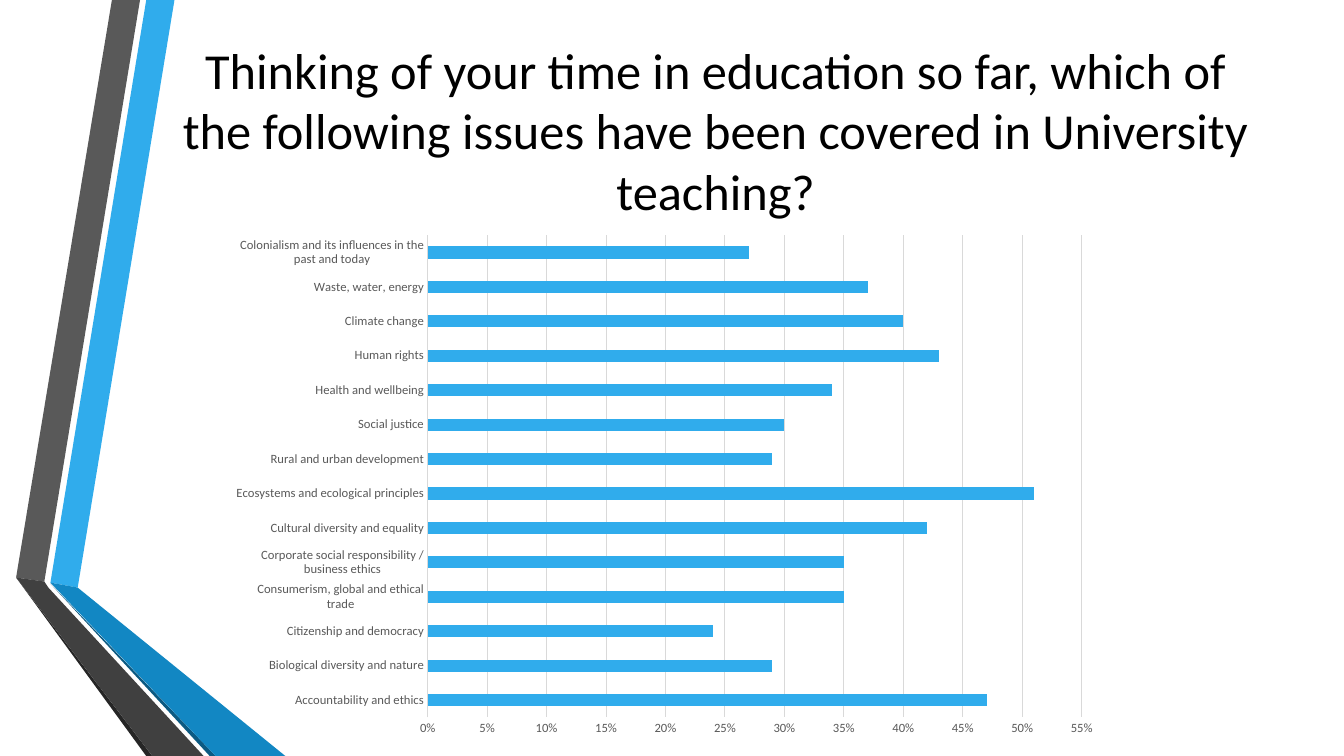
import pptx
import pptx.chart.data
import pptx.dml.color
import pptx.enum.chart
import pptx.enum.text
import pptx.oxml
import pptx.util

RGBColor = pptx.dml.color.RGBColor
BLACK = RGBColor(0x00, 0x00, 0x00)
LABEL_GREY = RGBColor(0x59, 0x59, 0x59)
RULE_GREY = RGBColor(0xD9, 0xD9, 0xD9)
BLUE = RGBColor(0x30, 0xAC, 0xEC)
MID_BLUE = RGBColor(0x12, 0x87, 0xC3)
DEEP_BLUE = RGBColor(0x0C, 0x5A, 0x82)
DARK_GREY = RGBColor(0x40, 0x40, 0x40)
DEEP_GREY = RGBColor(0x26, 0x26, 0x26)
FONT = "Calibri"

deck = pptx.Presentation()
deck.slide_width = pptx.util.Inches(13.33)
deck.slide_height = pptx.util.Inches(7.5)
page = deck.slides.add_slide(deck.slide_layouts[6])

# Grid of 100 columns by 100 rows
COLUMN = deck.slide_width / 100
ROW = deck.slide_height / 100


def place(column, row):
    return round(column * COLUMN), round(row * ROW)


def add_text(text, at, size, color, align, anchor, bottom_rows=0):
    box = page.shapes.add_textbox(*place(*at[:2]), *place(*at[2:]))
    frame = box.text_frame
    frame.word_wrap = True
    frame.vertical_anchor = anchor
    frame.margin_bottom = round(bottom_rows * ROW)
    para = frame.paragraphs[0]
    para.alignment = align
    span = para.add_run()
    span.text = text
    span.font.name = FONT
    span.font.size = pptx.util.Pt(size)
    span.font.color.rgb = color


# Folded ribbons along the left edge, back to front
ribbons = [
    (BLUE, [(3.75, 77.07), (5.78, 77.73), (12.98, 0), (10.88, 0)]),
    (LABEL_GREY, [(10.42, 0), (8.33, 0), (1.2, 76.4), (3.3, 76.93)]),
    (DEEP_GREY, [(1.2, 76.4), (10.88, 100), (11.33, 100)]),
    (DEEP_BLUE, [(3.75, 77.2), (15.6, 100), (16.05, 100)]),
    (MID_BLUE, [(3.75, 77.07), (16.05, 100), (21.23, 100), (5.78, 77.73)]),
    (DARK_GREY, [(15.15, 100), (3.6, 77.73), (3.3, 76.93), (1.2, 76.4), (11.33, 100)]),
]
for color, corners in ribbons:
    points = [place(*corner) for corner in corners]
    outline = page.shapes.build_freeform(*points[0])
    outline.add_line_segments(points[1:], close=True)
    ribbon = outline.convert_to_shape()
    ribbon.shadow.inherit = False
    ribbon.fill.solid()
    ribbon.fill.fore_color.rgb = color
    ribbon.line.fill.background()

# Question, lifted above the chart by a deep bottom margin
add_text(
    "Thinking of your time in education so far, which of the following issues "
    "have been covered in University teaching?",
    at=(12.15, 8, 82.2, 25.6), size=36, color=BLACK,
    align=pptx.enum.text.PP_ALIGN.CENTER,
    anchor=pptx.enum.text.MSO_ANCHOR.MIDDLE, bottom_rows=8,
)

# Share of students per issue, from the bottom bar up
issues = [
    ("Accountability and ethics", 0.47),
    ("Biological diversity and nature", 0.29),
    ("Citizenship and democracy", 0.24),
    ("Consumerism, global and ethical trade", 0.35),
    ("Corporate social responsibility / business ethics", 0.35),
    ("Cultural diversity and equality", 0.42),
    ("Ecosystems and ecological principles", 0.51),
    ("Rural and urban development", 0.29),
    ("Social justice", 0.3),
    ("Health and wellbeing", 0.34),
    ("Human rights", 0.43),
    ("Climate change", 0.4),
    ("Waste, water, energy", 0.37),
    ("Colonialism and its influences in the past and today", 0.27),
]
data = pptx.chart.data.CategoryChartData(number_format="0%")
data.categories = [issue for issue, share in issues]
data.add_series("Series 1", [share for issue, share in issues])
chart = page.shapes.add_chart(
    pptx.enum.chart.XL_CHART_TYPE.BAR_CLUSTERED,
    *place(17.55, 29.73), *place(64.88, 69.33), data,
).chart
chart.has_legend = False
chart.has_title = False
chart.font.name = FONT
chart.font.size = pptx.util.Pt(10)
chart.font.color.rgb = BLACK

# Bars
plot = chart.plots[0]
plot.gap_width = 182
plot.vary_by_categories = False
bars = plot.series[0]
bars.format.fill.solid()
bars.format.fill.fore_color.rgb = BLUE

# Axes
issue_axis, share_axis = chart.category_axis, chart.value_axis
for axis in (issue_axis, share_axis):
    axis.major_tick_mark = pptx.enum.chart.XL_TICK_MARK.NONE
    axis.minor_tick_mark = pptx.enum.chart.XL_TICK_MARK.NONE
    axis.tick_labels.font.name = FONT
    axis.tick_labels.font.size = pptx.util.Pt(9)
    axis.tick_labels.font.color.rgb = LABEL_GREY
share_axis.minimum_scale = 0
share_axis.maximum_scale = 0.55
share_axis.major_unit = 0.05
share_axis.tick_labels.number_format = "0%"
share_axis.tick_labels.number_format_is_linked = False
share_axis.format.line.fill.background()
issue_axis.has_major_gridlines = False
share_axis.has_major_gridlines = True
for rule in (issue_axis.format.line, share_axis.major_gridlines.format.line):
    rule.color.rgb = RULE_GREY
    rule.width = pptx.util.Pt(0.75)

# Plot area as shares of the chart frame
plot_area = chart.element.find(".//" + pptx.oxml.ns.qn("c:plotArea"))
for old in plot_area.findall(pptx.oxml.ns.qn("c:layout")):
    plot_area.remove(old)
plot_area.insert(0, pptx.oxml.parse_xml(
    f'<c:layout {pptx.oxml.ns.nsdecls("c")}><c:manualLayout>'
    '<c:layoutTarget val="inner"/><c:xMode val="edge"/><c:yMode val="edge"/>'
    '<c:x val="0.22"/><c:y val="0.02"/><c:w val="0.75"/><c:h val="0.92"/>'
    '</c:manualLayout></c:layout>'
))

deck.save("out.pptx")
